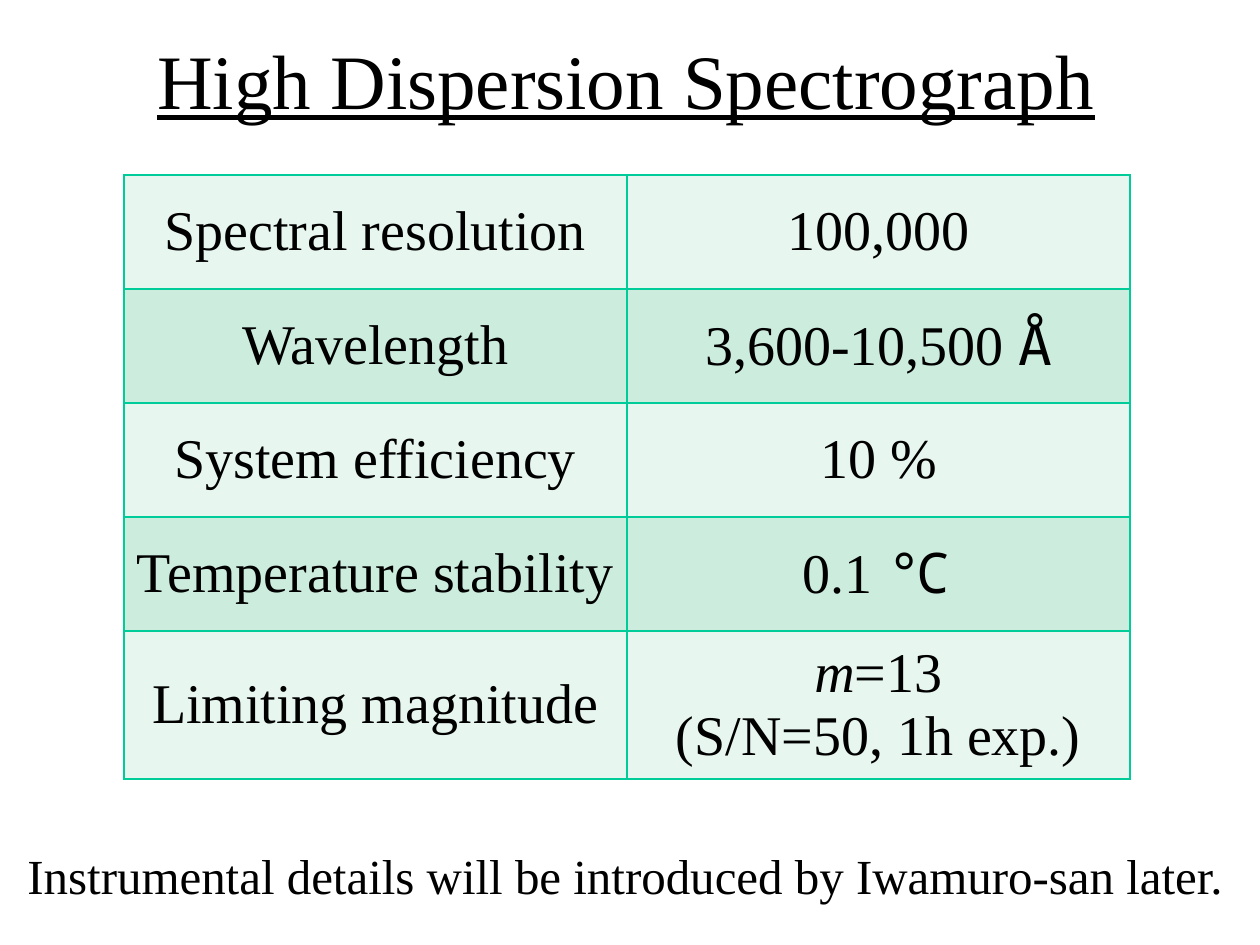
import pptx
import pptx.dml.color
import pptx.enum.text
import pptx.oxml
import pptx.oxml.ns
import pptx.util

PX = 914400 // 126
COLORS = {"text": "000000", "border": "00CC99", "light": "E7F6EF", "dark": "CCECDE"}
SERIF = "Times New Roman"
MONO = "DejaVu Sans Mono"
NS = pptx.oxml.ns.nsdecls("a")


def add_run(p, text, size, font=SERIF, italic=False, underline=False):
    r = p.add_run()
    r.text = text
    r.font.size = pptx.util.Pt(size)
    r.font.color.rgb = pptx.dml.color.RGBColor.from_string(COLORS["text"])
    r.font.name = font
    r.font.italic = italic
    r.font.underline = underline
    # Symbols such as ℃ take the East Asian typeface.
    r.font._element.append(pptx.oxml.parse_xml(f'<a:ea {NS} typeface="{font}"/>'))


def add_borders(cell):
    tcPr = cell._tc.get_or_add_tcPr()
    for i, side in enumerate("LRTB"):
        tcPr.insert(i, pptx.oxml.parse_xml(
            f'<a:ln{side} {NS} w="12700"><a:solidFill><a:srgbClr val="{COLORS["border"]}"/>'
            f'</a:solidFill></a:ln{side}>'))


prs = pptx.Presentation()
prs.slide_width = 1260 * PX
prs.slide_height = 945 * PX
s = prs.slides.add_slide(prs.slide_layouts[6])

# Title and closing note
lines = [
    ("High Dispersion Spectrograph", 44, True, (145, 26, 971, 106)),
    ("Instrumental details will be introduced by Iwamuro-san later.", 28, False,
     (15, 839, 1234, 72)),
]
for text, size, underline, box in lines:
    tf = s.shapes.add_textbox(*(v * PX for v in box)).text_frame
    tf.word_wrap = False
    tf.auto_size = pptx.enum.text.MSO_AUTO_SIZE.SHAPE_TO_FIT_TEXT
    add_run(tf.paragraphs[0], text, size, underline=underline)

# Specification table: each value is a list of paragraphs made of (text, font, italic) runs
specs = [
    ("Spectral resolution", [[("100,000", SERIF, False)]]),
    ("Wavelength", [[("3,600-10,500 ", SERIF, False), ("Å", MONO, False)]]),
    ("System efficiency", [[("10 %", SERIF, False)]]),
    ("Temperature stability", [[("0.1 ", SERIF, False), ("℃", MONO, False)]]),
    ("Limiting magnitude", [[("m", SERIF, True), ("=13", SERIF, False)],
                            [("(S/N=50, 1h exp.)", SERIF, False)]]),
]
row_heights = [114, 114, 114, 114, 148]
table = s.shapes.add_table(len(specs), 2, 124 * PX, 175 * PX,
                           1006 * PX, sum(row_heights) * PX).table
for col in table.columns:
    col.width = 503 * PX

for row, (label, value) in enumerate(specs):
    table.rows[row].height = row_heights[row] * PX
    fill = COLORS["dark" if row % 2 else "light"]
    for col, paragraphs in enumerate(([[(label, SERIF, False)]], value)):
        cell = table.cell(row, col)
        cell.fill.solid()
        cell.fill.fore_color.rgb = pptx.dml.color.RGBColor.from_string(fill)
        cell.vertical_anchor = pptx.enum.text.MSO_ANCHOR.MIDDLE
        add_borders(cell)
        tf = cell.text_frame
        for i, runs in enumerate(paragraphs):
            p = tf.add_paragraph() if i else tf.paragraphs[0]
            p.alignment = pptx.enum.text.PP_ALIGN.CENTER
            for text, font, italic in runs:
                add_run(p, text, 32, font, italic)

prs.save("out.pptx")
